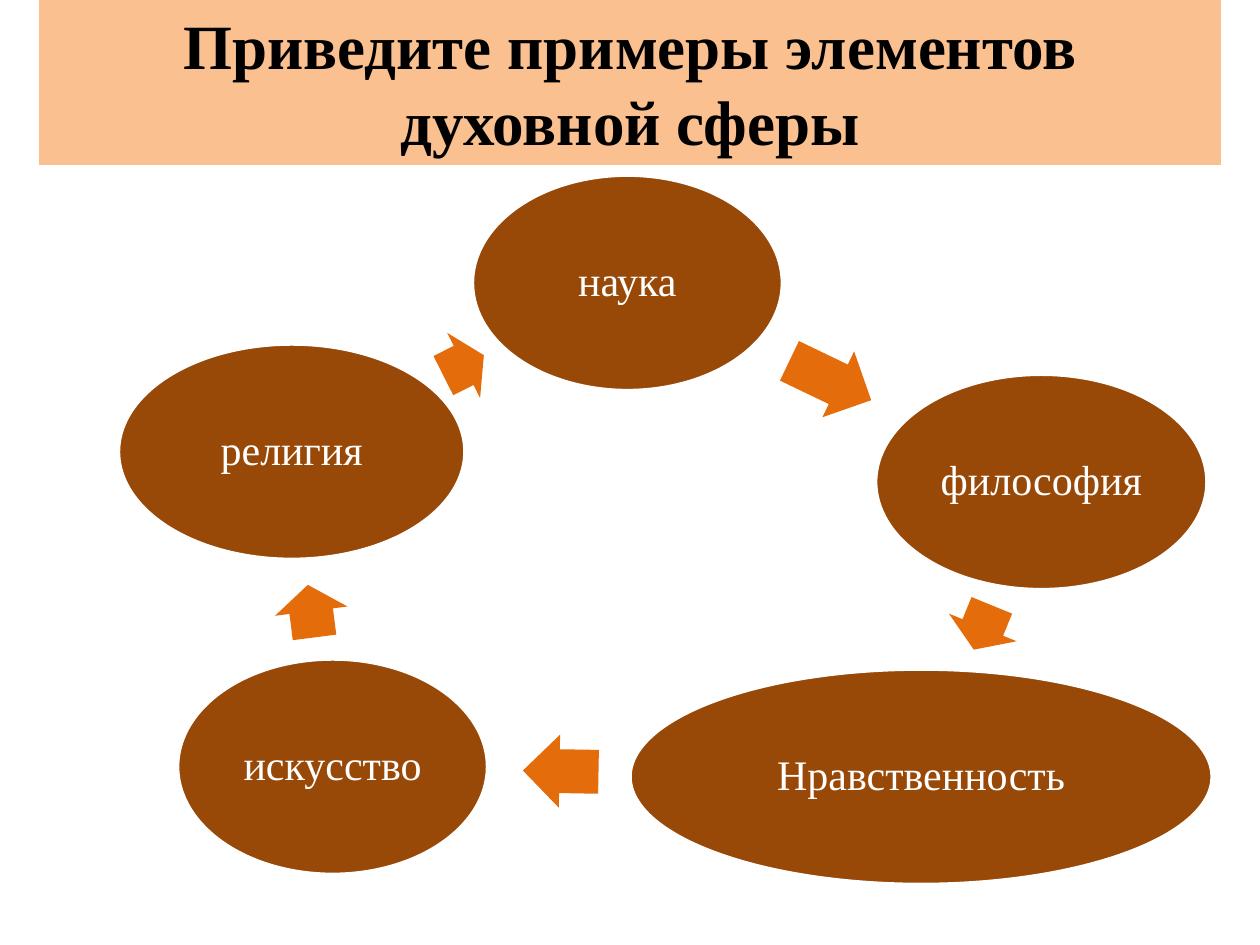
from pptx import Presentation
from pptx.dml.color import RGBColor
from pptx.enum.shapes import MSO_SHAPE as Shape
from pptx.enum.text import MSO_ANCHOR as Anchor, PP_ALIGN as Align
from pptx.util import Inches, Pt

BLACK = RGBColor(0x00, 0x00, 0x00)
WHITE = RGBColor(0xFF, 0xFF, 0xFF)
PEACH = RGBColor(0xFA, 0xC0, 0x90)
BROWN = RGBColor(0x98, 0x48, 0x07)
ORANGE = RGBColor(0xE4, 0x6C, 0x0A)
FONT = "Times New Roman"

SLIDE_WIDTH, SLIDE_HEIGHT = 10, 7.5
TITLE = "Приведите примеры элементов духовной сферы"
TITLE_BOX = (0.31, 0, 9.38, 1.31)
CYCLE_BOX = (0.94, 1.39, 8.68, 5.63)
OVAL_HEIGHT = 1.71
ARROW_HEIGHT = 0.58

# Offsets within the cycle box: text, left, top, width
OVALS = [
    ("наука", 2.81, 0, 2.46),
    ("философия", 6.01, 1.58, 2.63),
    ("Нравственность", 4.06, 3.92, 4.62),
    ("искусство", 0.47, 3.84, 2.46),
    ("религия", 0, 1.34, 2.75),
]
# Offsets within the cycle box: left, top, length, rotation
ARROWS = [
    (5.29, 1.34, 0.72, 25.7),
    (6.67, 3.3, 0.38, 112.2),
    (3.21, 4.44, 0.6, 181),
    (1.32, 3.17, 0.42, 262.7),
    (2.56, 1.22, 0.36, 333.2),
]


def add_filled_shape(slide, kind, box, fill):
    shape = slide.shapes.add_shape(kind, *(Inches(length) for length in box))
    shape.shadow.inherit = False
    shape.fill.solid()
    shape.fill.fore_color.rgb = fill
    shape.line.fill.background()
    return shape


def write_centred(shape, text, size, color, bold=False):
    frame = shape.text_frame
    frame.word_wrap = True
    frame.vertical_anchor = Anchor.MIDDLE
    paragraph = frame.paragraphs[0]
    paragraph.alignment = Align.CENTER
    run = paragraph.add_run()
    run.text = text
    run.font.name = FONT
    run.font.size = Pt(size)
    run.font.bold = bold
    run.font.color.rgb = color
    return frame


def add_title(slide, box):
    banner = add_filled_shape(slide, Shape.RECTANGLE, box, PEACH)
    write_centred(banner, TITLE, 36, BLACK, bold=True)


def add_oval(slide, box, text):
    oval = add_filled_shape(slide, Shape.OVAL, box, BROWN)
    oval.line.color.rgb = WHITE
    oval.line.width = Pt(2)
    frame = write_centred(oval, text, 24, WHITE)
    frame.margin_left = frame.margin_right = Inches(0.03)
    frame.margin_top = frame.margin_bottom = Inches(0.03)
    frame.paragraphs[0].line_spacing = 0.9


def add_arrow(slide, box, rotation):
    arrow = add_filled_shape(slide, Shape.RIGHT_ARROW, box, ORANGE)
    arrow.adjustments[0] = 0.6
    arrow.adjustments[1] = 0.5
    arrow.rotation = rotation


def add_cycle(slide, box):
    """Place each oval, followed by the arrow that leads to the next one."""
    left, top = box[:2]
    for (text, x, y, width), (arrow_x, arrow_y, length, rotation) in zip(OVALS, ARROWS):
        add_oval(slide, (left + x, top + y, width, OVAL_HEIGHT), text)
        add_arrow(slide, (left + arrow_x, top + arrow_y, length, ARROW_HEIGHT), rotation)


def main():
    presentation = Presentation()
    presentation.slide_width = Inches(SLIDE_WIDTH)
    presentation.slide_height = Inches(SLIDE_HEIGHT)
    slide = presentation.slides.add_slide(presentation.slide_layouts[6])
    add_title(slide, TITLE_BOX)
    add_cycle(slide, CYCLE_BOX)
    presentation.save("out.pptx")


if __name__ == "__main__":
    main()
